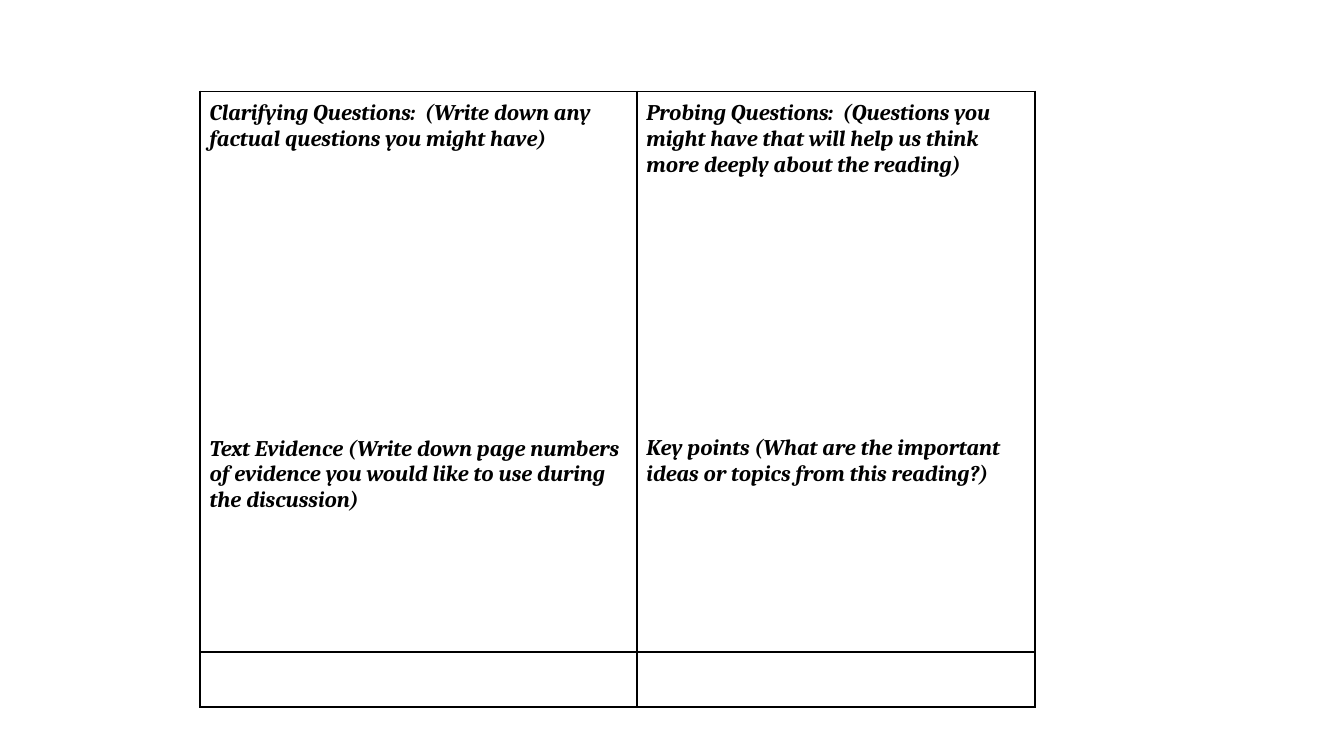
from dataclasses import dataclass

from lxml.etree import SubElement
from pptx import Presentation
from pptx.dml.color import RGBColor
from pptx.oxml.ns import qn
from pptx.util import Inches, Pt


@dataclass(frozen=True)
class Theme:
    ink: str = "000000"
    font: str = "Cambria"
    size: float = 12
    border: float = 1


THEME = Theme()
SLIDE_WIDTH = 10
SLIDE_HEIGHT = SLIDE_WIDTH * 9 / 16
COL_WIDTHS = (3.25, 2.96)
ROW_HEIGHTS = (4.17, 0.41)

# Each column: upper prompt, lower prompt, points of writing space between them
PROMPTS = (
    ("Clarifying Questions:  (Write down any  factual questions you might have)",
     "Text Evidence (Write down page numbers of evidence you would like to use "
     "during the discussion)", 152),
    ("Probing Questions:  (Questions you might have that will help us think "
     "more deeply about the reading)",
     "Key points (What are the important ideas or topics from this reading?)", 138),
)


def set_borders(cell):
    tc_pr = cell._tc.get_or_add_tcPr()
    for side in ("a:lnL", "a:lnR", "a:lnT", "a:lnB"):
        ln = SubElement(tc_pr, qn(side), w=str(Pt(THEME.border)))
        fill = SubElement(ln, qn("a:solidFill"))
        SubElement(fill, qn("a:srgbClr"), val=THEME.ink)


def format_prompt(p):
    font = p.runs[0].font
    font.name = THEME.font
    font.size = Pt(THEME.size)
    font.bold = font.italic = True
    font.color.rgb = RGBColor.from_string(THEME.ink)


def fill_prompts(cell, upper, lower, gap):
    cell.margin_left = cell.margin_right = Inches(0.07)
    cell.margin_top = cell.margin_bottom = Inches(0.07)
    tf = cell.text_frame
    tf.text = upper
    p = tf.add_paragraph()
    p.text = lower
    p.space_before = Pt(gap)
    for p in tf.paragraphs:
        format_prompt(p)


def add_question_table(s):
    frame = s.shapes.add_table(
        len(ROW_HEIGHTS), len(COL_WIDTHS), Inches(1.49), Inches(0.68),
        Inches(sum(COL_WIDTHS)), Inches(sum(ROW_HEIGHTS)))
    table = frame.table
    table.first_row = table.horz_banding = False
    for col, width in zip(table.columns, COL_WIDTHS):
        col.width = Inches(width)
    for row, height in zip(table.rows, ROW_HEIGHTS):
        row.height = Inches(height)
    for cell in table.iter_cells():
        set_borders(cell)
        cell.fill.background()
    for i, prompt in enumerate(PROMPTS):
        fill_prompts(table.cell(0, i), *prompt)


def main():
    prs = Presentation()
    prs.slide_width = Inches(SLIDE_WIDTH)
    prs.slide_height = Inches(SLIDE_HEIGHT)
    s = prs.slides.add_slide(prs.slide_layouts[6])
    add_question_table(s)
    prs.save("out.pptx")


if __name__ == "__main__":
    main()
